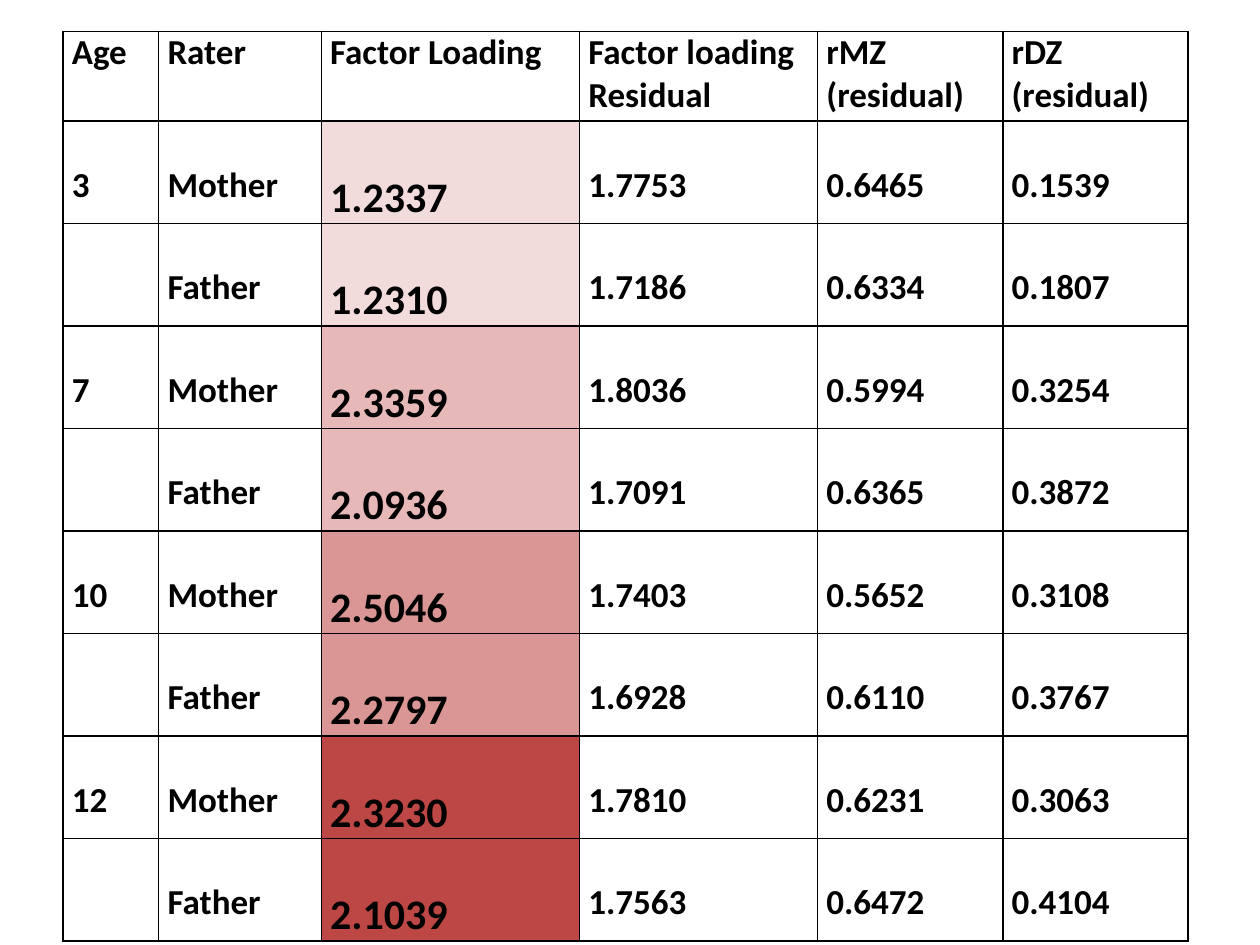
"""Builds a slide with a table of factor loadings by age and rater."""
import pptx
import pptx.dml.color
import pptx.util
from lxml import etree

RGB = pptx.dml.color.RGBColor
INCH = pptx.util.Inches
BLACK = RGB(0, 0, 0)
WHITE = RGB(255, 255, 255)
SHADES = [RGB(0xF2, 0xDC, 0xDB), RGB(0xE6, 0xB9, 0xB8),
          RGB(0xD9, 0x96, 0x94), RGB(0xBC, 0x47, 0x44)]
NS = "http://schemas.openxmlformats.org/drawingml/2006/main"
WIDTHS = [0.76, 1.29, 2.05, 1.89, 1.47, 1.47]
HEIGHT = 0.71
SHADED = 2
ROWS = [
    ["Age", "Rater", "Factor Loading", "Factor loading Residual",
     "rMZ (residual)", "rDZ (residual)"],
    ["3", "Mother", "1.2337", "1.7753", "0.6465", "0.1539"],
    ["", "Father", "1.2310", "1.7186", "0.6334", "0.1807"],
    ["7", "Mother", "2.3359", "1.8036", "0.5994", "0.3254"],
    ["", "Father", "2.0936", "1.7091", "0.6365", "0.3872"],
    ["10", "Mother", "2.5046", "1.7403", "0.5652", "0.3108"],
    ["", "Father", "2.2797", "1.6928", "0.6110", "0.3767"],
    ["12", "Mother", "2.3230", "1.7810", "0.6231", "0.3063"],
    ["", "Father", "2.1039", "1.7563", "0.6472", "0.4104"],
]


def frame_cell(cell):
    """Draws a thin black line on each side of a cell."""
    props = cell._tc.get_or_add_tcPr()
    for spot, side in enumerate("LRTB"):
        line = etree.Element(f"{{{NS}}}ln{side}", w=str(pptx.util.Pt(1)))
        fill = etree.SubElement(line, f"{{{NS}}}solidFill")
        etree.SubElement(fill, f"{{{NS}}}srgbClr", val=str(BLACK))
        props.insert(spot, line)


deck = pptx.Presentation()
deck.slide_width, deck.slide_height = INCH(10), INCH(7.5)
slide = deck.slides.add_slide(deck.slide_layouts[6])

frame = slide.shapes.add_table(
    len(ROWS), len(WIDTHS), INCH(0.5), INCH(0.25),
    INCH(sum(WIDTHS)), INCH(HEIGHT * len(ROWS)))
table = frame.table
table.horz_banding = False
for col, width in zip(table.columns, WIDTHS):
    col.width = INCH(width)

for r, row in enumerate(ROWS):
    table.rows[r].height = INCH(HEIGHT)
    for c, text in enumerate(row):
        cell = table.cell(r, c)
        tinted = r > 0 and c == SHADED
        cell.margin_left = cell.margin_right = INCH(0.07)
        cell.margin_top = cell.margin_bottom = 0
        cell.fill.solid()
        cell.fill.fore_color.rgb = SHADES[(r - 1) // 2] if tinted else WHITE
        frame_cell(cell)
        if not text:
            continue
        para = cell.text_frame.paragraphs[0]
        if r > 0:
            para.line_spacing = 2.0
        run = para.add_run()
        run.text = text
        run.font.name = "Calibri"
        run.font.size = pptx.util.Pt(24 if tinted else 20)
        run.font.bold = True
        run.font.color.rgb = BLACK

frame.height = INCH(7.11)
deck.save("out.pptx")
